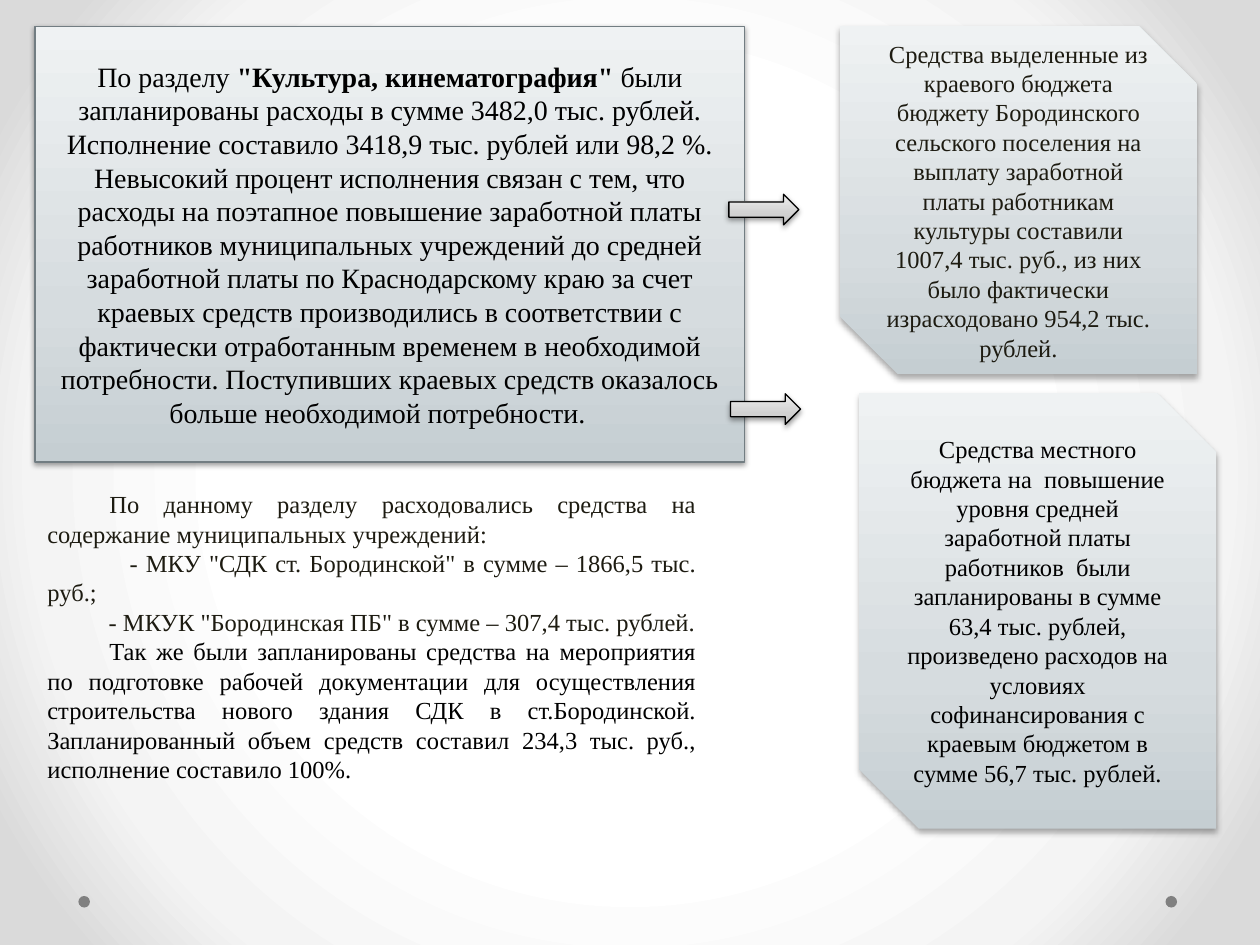
from typing import NamedTuple, Optional

from lxml.etree import SubElement as Sub
from pptx import Presentation
from pptx.dml.color import RGBColor as RGB
from pptx.enum.shapes import MSO_SHAPE as Form
from pptx.enum.text import MSO_ANCHOR as Anchor, MSO_AUTO_SIZE as Auto, PP_ALIGN as Align
from pptx.oxml.ns import qn
from pptx.util import Pt

FONT = "Times New Roman"
BLACK = RGB(0x00, 0x00, 0x00)
DARK = RGB(0x1D, 0x1B, 0x11)
SLATE = RGB(0x72, 0x7D, 0x82)
GRAY = RGB(0x80, 0x80, 0x80)
STEEL = [(0, RGB(0xC5, 0xCE, 0xD2)), (35, RGB(0xD6, 0xDC, 0xDF)), (100, RGB(0xEF, 0xF2, 0xF3))]
SILVER = [(0, RGB(0xBD, 0xBD, 0xBD)), (35, RGB(0xD1, 0xD1, 0xD1)), (100, RGB(0xEE, 0xEE, 0xEE))]
GLOW = [(50, RGB(0xFF, 0xFF, 0xFF)), (76, RGB(0xF4, 0xF4, 0xF4)), (92, RGB(0xDA, 0xDA, 0xDA))]


class Shade(NamedTuple):
    alpha: int
    blur: float
    dist: float


class Para(NamedTuple):
    runs: list
    size: int
    color: RGB
    align: Align = Align.CENTER
    indent: float = 0


class Block(NamedTuple):
    form: Form
    box: tuple
    stops: list
    shade: Shade
    edge: Optional[RGB] = None
    para: Optional[Para] = None


HARD = Shade(38, 3.1, 1.6)
SOFT = Shade(32, 3.5, 2.2)

PLAN = Para([
    ("По разделу ", False),
    ('"Культура, кинематография" ', True),
    ("были запланированы расходы в сумме 3482,0 тыс. рублей. Исполнение составило "
     "3418,9 тыс. рублей или 98,2 %. Невысокий процент исполнения связан с тем, что "
     "расходы на поэтапное повышение заработной платы работников муниципальных "
     "учреждений до средней заработной платы по Краснодарскому краю за счет краевых "
     "средств производились в соответствии с фактически отработанным временем в "
     "необходимой потребности. Поступивших краевых средств оказалось больше "
     "необходимой потребности.\t", False),
], 16, BLACK)
REGION = Para([
    ("Средства выделенные из краевого бюджета бюджету Бородинского сельского "
     "поселения на выплату заработной платы работникам культуры составили 1007,4 "
     "тыс. руб., из них было фактически израсходовано 954,2 тыс. рублей.", False),
], 14, DARK)
LOCAL = Para([
    ("Средства местного бюджета на  повышение уровня средней заработной платы "
     "работников  были запланированы в сумме 63,4 тыс. рублей, произведено расходов "
     "на условиях софинансирования с краевым бюджетом в сумме 56,7 тыс. рублей.", False),
], 14, BLACK)

BLOCKS = [
    Block(Form.RECTANGLE, (20, 15, 405.5, 249), STEEL, HARD, SLATE, PLAN),
    Block(Form.RIGHT_ARROW, (416.5, 111, 40, 17.5), SILVER, HARD, BLACK),
    Block(Form.SNIP_2_DIAG_RECTANGLE, (480, 15, 204, 199), STEEL, SOFT, None, REGION),
    Block(Form.SNIP_2_DIAG_RECTANGLE, (491, 224.5, 204, 249), STEEL, SOFT, None, LOCAL),
    Block(Form.RIGHT_ARROW, (417.5, 225, 40, 17.5), SILVER, HARD, BLACK),
]
NOTES = [
    Para([("По данному разделу расходовались средства на содержание муниципальных "
           "учреждений:", False)], 14, DARK, Align.JUSTIFY, 35.4),
    Para([('- МКУ "СДК ст. Бородинской" в сумме – 1866,5 тыс. руб.;', False)],
         14, DARK, Align.JUSTIFY, 47),
    Para([('- МКУК "Бородинская ПБ" в сумме – 307,4 тыс. рублей.', False)],
         14, DARK, Align.LEFT, 35),
    Para([("Так же были запланированы средства на мероприятия по подготовке рабочей "
           "документации для осуществления строительства нового здания СДК в "
           "ст.Бородинской. Запланированный объем средств составил 234,3 тыс. руб., "
           "исполнение составило 100%.", False)], 14, BLACK, Align.JUSTIFY, 35.4),
]


def place(box: tuple) -> list:
    return [Pt(n) for n in box]


def tint(node, color: RGB):
    return Sub(node, qn("a:srgbClr"), val=str(color))


def blend(fill, root, stops: list, round_: bool = False) -> None:
    fill.gradient()
    grad = next(root.iter(qn("a:gradFill")))
    for kid in list(grad):
        grad.remove(kid)
    group = Sub(grad, qn("a:gsLst"))
    for pos, color in stops:
        tint(Sub(group, qn("a:gs"), pos=str(pos * 1000)), color)
    if round_:
        way = Sub(grad, qn("a:path"), path="circle")
        Sub(way, qn("a:fillToRect"), {side: "50000" for side in "ltrb"})
    else:
        Sub(grad, qn("a:lin"), ang=str(270 * 60000), scaled="0")


def cast(shape, shade: Shade) -> None:
    shape.shadow.inherit = False
    effects = next(shape._element.iter(qn("a:effectLst")))
    drop = Sub(effects, qn("a:outerShdw"), blurRad=str(Pt(shade.blur)),
               dist=str(Pt(shade.dist)), dir=str(90 * 60000), rotWithShape="0")
    Sub(tint(drop, BLACK), qn("a:alpha"), val=str(shade.alpha * 1000))


def write(line, para: Para) -> None:
    line.alignment = para.align
    if para.indent:
        line._p.get_or_add_pPr().set("indent", str(Pt(para.indent)))
    for text, bold in para.runs:
        run = line.add_run()
        run.text = text
        font = run.font
        font.name, font.size, font.bold = FONT, Pt(para.size), bold
        font.color.rgb = para.color


def draw(slide, block: Block) -> None:
    shape = slide.shapes.add_shape(block.form, *place(block.box))
    blend(shape.fill, shape._element, block.stops)
    if block.edge is None:
        shape.line.fill.background()
    else:
        shape.line.color.rgb = block.edge
        shape.line.width = Pt(0.75)
    cast(shape, block.shade)
    if block.para:
        frame = shape.text_frame
        frame.word_wrap = True
        frame.vertical_anchor = Anchor.MIDDLE
        write(frame.paragraphs[0], block.para)


def dot(slide, left: float) -> None:
    shape = slide.shapes.add_shape(Form.OVAL, *place((left, 512, 6.6, 6.6)))
    shape.fill.solid()
    shape.fill.fore_color.rgb = GRAY
    shape.line.fill.background()
    shape.shadow.inherit = False


def list_notes(slide, box: tuple, paras: list) -> None:
    frame = slide.shapes.add_textbox(*place(box)).text_frame
    frame.word_wrap = True
    frame.auto_size = Auto.SHAPE_TO_FIT_TEXT
    for i, para in enumerate(paras):
        write(frame.add_paragraph() if i else frame.paragraphs[0], para)


def main() -> None:
    """Build the slide on culture spending."""
    deck = Presentation()
    deck.slide_width, deck.slide_height = Pt(720), Pt(540)
    slide = deck.slides.add_slide(deck.slide_layouts[6])
    blend(slide.background.fill, slide._element, GLOW, True)
    for left in (666, 44.8):
        dot(slide, left)
    for block in BLOCKS[:-1]:
        draw(slide, block)
    list_notes(slide, (20, 276, 385, 186.5), NOTES)
    draw(slide, BLOCKS[-1])
    deck.save("out.pptx")


if __name__ == "__main__":
    main()
